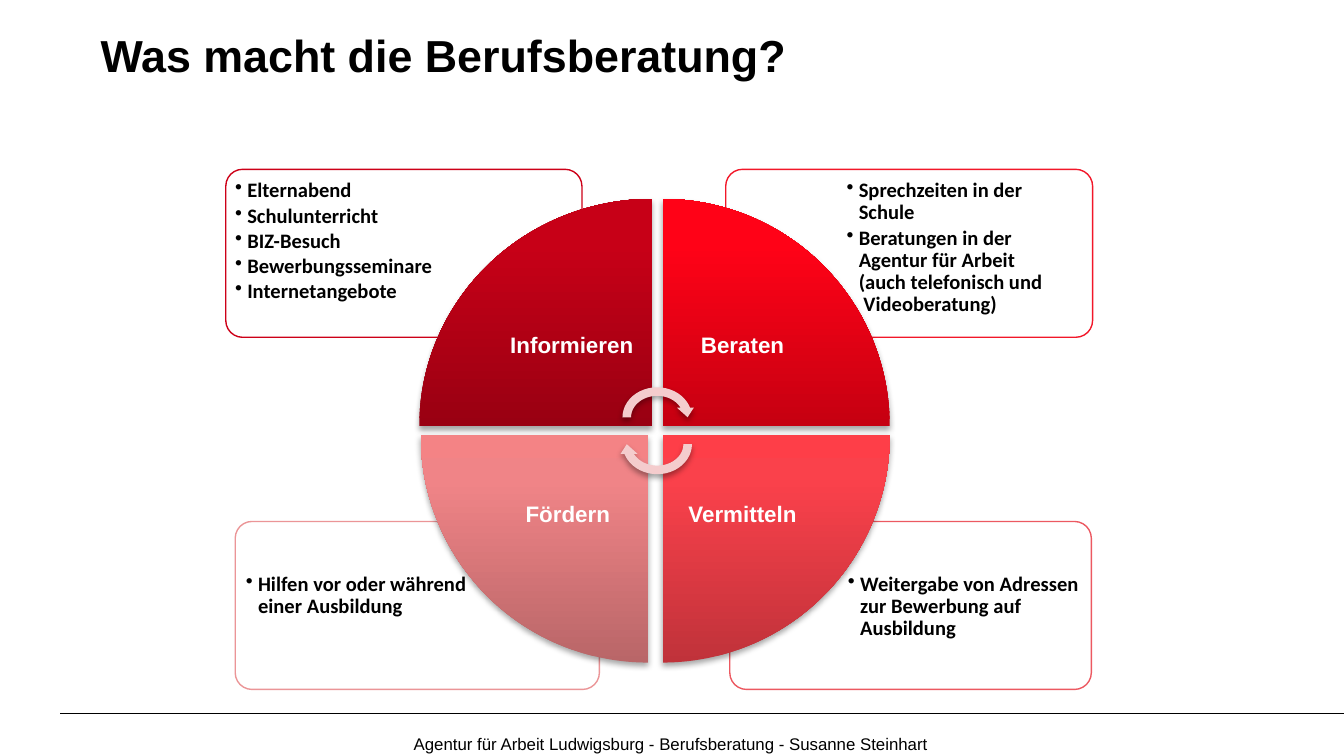
from dataclasses import dataclass

from lxml.etree import SubElement
from pptx import Presentation
from pptx.dml.color import RGBColor
from pptx.enum.shapes import MSO_CONNECTOR, MSO_SHAPE
from pptx.enum.text import MSO_ANCHOR, PP_ALIGN
from pptx.oxml.ns import qn
from pptx.util import Inches, Pt


@dataclass(frozen=True)
class Theme:
    black: str = "000000"
    white: str = "FFFFFF"
    arrow: str = "F4CCCD"
    head_font: str = "Arial"
    note_font: str = "Calibri"
    title: float = 24
    label: float = 12
    note: float = 11
    footer: float = 9


THEME = Theme()
INDENT = 0.09
LABEL_SIZE = 1.19

# Note box, note text box, outline colour, notes
NOTES = [
    ((5.43, 3.88, 2.69, 1.25), (6.26, 4.22, 1.83, 0.88), "EC5961",
     ["Weitergabe von Adressen zur Bewerbung auf Ausbildung"]),
    ((1.75, 3.88, 2.71, 1.25), (1.78, 4.22, 1.85, 0.88), "EB9597",
     ["Hilfen vor oder während\veiner Ausbildung"]),
    ((5.4, 1.26, 2.73, 1.25), (6.25, 1.29, 1.86, 0.88), "F21729",
     ["Sprechzeiten in der\vSchule",
      "Beratungen in der\vAgentur für Arbeit\v(auch telefonisch und\v Videoberatung)"]),
    ((1.68, 1.26, 2.65, 1.25), (1.7, 1.29, 1.8, 0.88), "CD0018",
     ["Elternabend", "Schulunterricht", "BIZ-Besuch", "Bewerbungsseminare",
      "Internetangebote"]),
]

# Label, wedge box, rotation, gradient from bottom to top
WEDGES = [
    ("Informieren", (3.12, 1.48, 1.73, 1.69), 0, ("990012", "C70017", "C80017")),
    ("Beraten", (4.93, 1.48, 1.69, 1.69), 90, ("C60011", "FF0217", "FF0318")),
    ("Vermitteln", (4.93, 3.24, 1.69, 1.69), 180, ("C0323A", "FA414B", "FE3E48")),
    ("Fördern", (3.13, 3.24, 1.69, 1.69), 270, ("B96668", "F08487", "F48385")),
]


def inches(box):
    return [Inches(v) for v in box]


def add_text(slide, box, lines, size, font, color=THEME.black, bold=False,
             inset=None, bullet=False, frame=None, para=None):
    """Write one paragraph per line; frame and para hold format values."""
    tf = slide.shapes.add_textbox(*inches(box)).text_frame
    frame_format = {"word_wrap": True, **(frame or {})}
    if inset is not None:
        for side in ("left", "top", "right", "bottom"):
            frame_format[f"margin_{side}"] = Inches(inset)
    for name, value in frame_format.items():
        setattr(tf, name, value)
    for i, line in enumerate(lines):
        p = tf.paragraphs[0] if i == 0 else tf.add_paragraph()
        p.text = line
        for name, value in (para or {}).items():
            setattr(p, name, value)
        if bullet:
            pPr = p._p.get_or_add_pPr()
            pPr.set("marL", str(Inches(INDENT)))
            pPr.set("indent", str(-Inches(INDENT)))
            SubElement(pPr, qn("a:buChar"), char="•")
        for target in (p, *p.runs):
            f = target.font
            for name, value in {"size": Pt(size), "name": font, "bold": bold}.items():
                setattr(f, name, value)
            f.color.rgb = RGBColor.from_string(color)
        for br in p._p.findall(qn("a:br")):
            SubElement(br, qn("a:rPr"), sz=str(Pt(size).centipoints))


def add_shape(slide, kind, box, fill, rotation=0):
    sp = slide.shapes.add_shape(kind, *inches(box))
    sp.rotation = rotation
    sp.fill.solid()
    sp.fill.fore_color.rgb = RGBColor.from_string(fill)
    sp.line.fill.background()
    sp.shadow.inherit = False
    return sp


def add_shadow(sp):
    effects = sp._element.spPr.find(qn("a:effectLst"))
    shadow = SubElement(effects, qn("a:outerShdw"), blurRad=str(Pt(3.1)),
                        dist=str(Pt(1.8)), dir="5400000", rotWithShape="0")
    color = SubElement(shadow, qn("a:srgbClr"), val=THEME.black)
    SubElement(color, qn("a:alpha"), val="35000")


def set_gradient(sp, colors):
    """Run the colours from bottom to top, whatever the rotation."""
    sp.fill.gradient()
    sp.fill.gradient_angle = 90
    grad = sp._element.spPr.find(qn("a:gradFill"))
    grad.set("rotWithShape", "0")
    stops = grad.find(qn("a:gsLst"))
    for stop in list(stops):
        stops.remove(stop)
    for pos, color in zip((0, 80, 100), colors):
        stop = SubElement(stops, qn("a:gs"), pos=str(pos * 1000))
        SubElement(stop, qn("a:srgbClr"), val=color)


def add_note(slide, box, text_box, color, lines):
    sp = add_shape(slide, MSO_SHAPE.ROUNDED_RECTANGLE, box, THEME.white)
    sp.adjustments[0] = 0.1
    sp.line.color.rgb = RGBColor.from_string(color)
    sp.line.width = Pt(0.75)
    fill = sp._element.spPr.find(qn("a:solidFill"))
    SubElement(fill[0], qn("a:alpha"), val="90000")
    add_text(slide, text_box, lines, THEME.note, THEME.note_font, bold=True,
             inset=0.05, bullet=True,
             para={"line_spacing": 0.9, "space_after": Pt(1.65)})


def add_wedge(slide, label, box, rotation, colors):
    """Draw a quarter disc with its label in the corner nearest the centre."""
    sp = add_shape(slide, MSO_SHAPE.PIE_WEDGE, box, colors[0], rotation)
    set_gradient(sp, colors)
    add_shadow(sp)
    x, y, w, h = box
    if rotation in (0, 270):
        x += w - LABEL_SIZE
    if rotation in (0, 90):
        y += h - LABEL_SIZE
    add_text(slide, (x, y, LABEL_SIZE, LABEL_SIZE), [label], THEME.label,
             THEME.head_font, THEME.white, True, inset=0.09,
             frame={"vertical_anchor": MSO_ANCHOR.MIDDLE},
             para={"alignment": PP_ALIGN.CENTER, "line_spacing": 0.9})


def add_cycle(slide, box):
    """Place two circular arrows, one turned, at the top and bottom of the box."""
    x, y, w, h = box
    arrow_h = 0.51
    for top, rotation in ((y, 0), (y + h - arrow_h, 180)):
        add_shadow(add_shape(slide, MSO_SHAPE.CIRCULAR_ARROW, (x, top, w, arrow_h),
                             THEME.arrow, rotation))


def add_footer(slide, box):
    x, y, w, h = box
    line = slide.shapes.add_connector(MSO_CONNECTOR.STRAIGHT, *inches((x, y, x + w, y)))
    line.line.color.rgb = RGBColor.from_string(THEME.black)
    line.line.width = Pt(0.5)
    SubElement(line._element.spPr, qn("a:effectLst"))
    add_text(slide, (x + 2.53, y + 0.1, 6.16, h - 0.1),
             ["Agentur für Arbeit Ludwigsburg - Berufsberatung - Susanne Steinhart"],
             THEME.footer, THEME.head_font)


def main():
    prs = Presentation()
    prs.slide_width = Inches(10)
    prs.slide_height = prs.slide_width * 9 // 16
    slide = prs.slides.add_slide(prs.slide_layouts[6])
    add_text(slide, (0.65, 0.16, 9, 0.94), ["Was macht die Berufsberatung?"],
             THEME.title, THEME.head_font, bold=True)
    for note in NOTES:
        add_note(slide, *note)
    for wedge in WEDGES:
        add_wedge(slide, *wedge)
    add_cycle(slide, (4.6, 2.85, 0.58, 0.71))
    add_footer(slide, (0.45, 5.31, 9.55, 0.31))
    prs.save("out.pptx")


if __name__ == "__main__":
    main()
